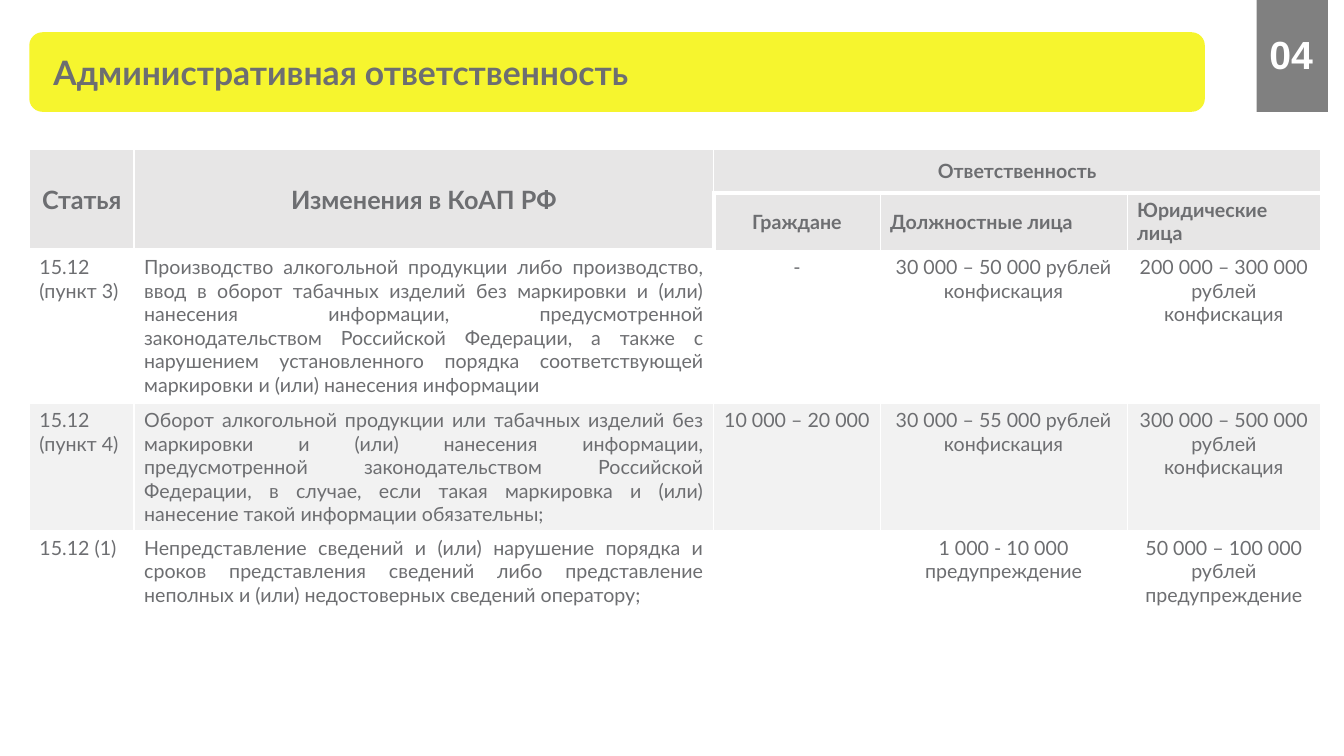
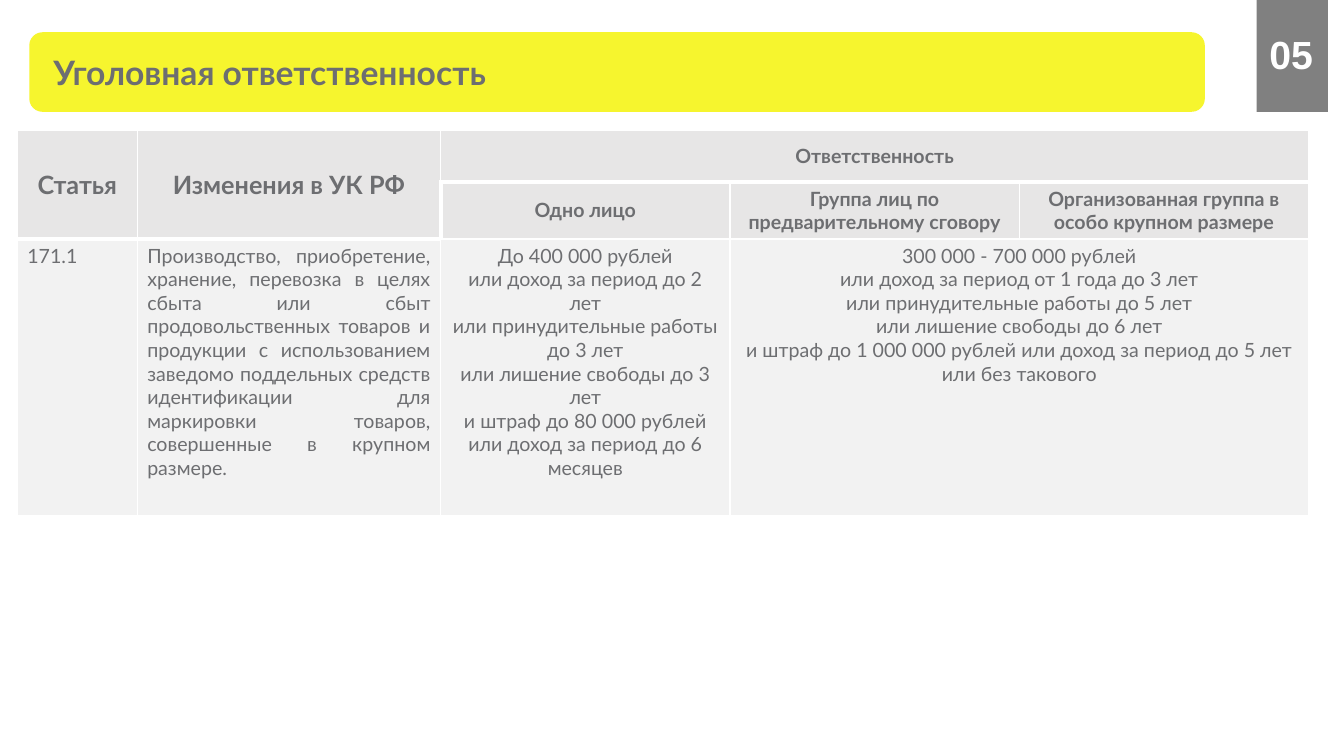
"""Builds two slides on administrative and criminal liability."""
from lxml import etree
from pptx import Presentation
from pptx import util as u
from pptx.dml.color import RGBColor
from pptx.enum import shapes, text
from pptx.oxml import ns

YELLOW = RGBColor(0xF6, 0xF5, 0x2E)
GREY = RGBColor(0x80, 0x80, 0x80)
INK = RGBColor(0x6D, 0x6E, 0x71)
HEAD = RGBColor(0xE7, 0xE6, 0xE6)
BAND = RGBColor(0xF2, 0xF2, 0xF2)
WHITE = RGBColor(0xFF, 0xFF, 0xFF)
LEFT, CENTER, JUSTIFY = (
    text.PP_ALIGN.LEFT, text.PP_ALIGN.CENTER, text.PP_ALIGN.JUSTIFY)
MIDDLE = text.MSO_ANCHOR.MIDDLE


def write(tf, content, size=14, font="Lato", color=INK, bold=False, align=LEFT):
    for i, line in enumerate(content.split("\n")):
        p = tf.paragraphs[0] if i == 0 else tf.add_paragraph()
        p.alignment = align
        r = p.add_run()
        r.text = line
        r.font.size = u.Pt(size)
        r.font.name = font
        r.font.bold = bold
        r.font.color.rgb = color


def edge_cell(cell, thick):
    tcPr = cell._tc.get_or_add_tcPr()
    for side in "LRTB":
        ln = etree.SubElement(tcPr, ns.qn("a:ln" + side))
        ln.set("w", str(u.Pt(3 if side in thick else 1)))
        fill = etree.SubElement(ln, ns.qn("a:solidFill"))
        etree.SubElement(fill, ns.qn("a:srgbClr")).set("val", str(WHITE))


def thick_sides(row, col):
    if row == 0:
        return "B"
    if row == 1:
        return "B" if col < 2 else "LT" if col == 2 else "T"
    return "T" if row == 2 and col < 2 else ""


class Deck:
    """Holds the presentation, its style and the current slide."""

    def __init__(self):
        self.prs = Presentation()
        self.prs.slide_width = u.Inches(13.33)
        self.prs.slide_height = u.Inches(7.5)
        self.s = None

    def x(self, share):
        return round(self.prs.slide_width * share / 100)

    def y(self, share):
        return round(self.prs.slide_height * share / 100)

    def box(self, left, top, width, height):
        return self.x(left), self.y(top), self.x(width), self.y(height)

    def slide(self, title, number):
        self.s = self.prs.slides.add_slide(self.prs.slide_layouts[6])
        banner = self.shape(shapes.MSO_SHAPE.ROUNDED_RECTANGLE, YELLOW,
                            2.18, 4.27, 87.47, 10.53)
        self.label(banner, title, 0.2, size=24, bold=True)
        self.shape(shapes.MSO_SHAPE.RECTANGLE, GREY, 93.5, 0, 5.3, 14.8)
        sp = self.s.shapes.add_textbox(*self.box(94.45, 4, 3.6, 6.27))
        self.label(sp, number, 0, size=28, font="Arial", color=WHITE, bold=True)

    def shape(self, kind, color, *place):
        sp = self.s.shapes.add_shape(kind, *self.box(*place))
        sp.shadow.inherit = False
        sp.fill.solid()
        sp.fill.fore_color.rgb = color
        sp.line.fill.background()
        return sp

    def label(self, sp, content, inset, **style):
        tf = sp.text_frame
        tf.word_wrap = True
        tf.vertical_anchor = MIDDLE
        tf.margin_left = tf.margin_right = u.Inches(inset)
        tf.margin_top = tf.margin_bottom = u.Inches(inset)
        write(tf, content, **style)

    def table(self, left, top, cols, rows, cells, merges, banded, head_aligns):
        frame = self.s.shapes.add_table(
            len(rows), len(cols), *self.box(left, top, sum(cols), sum(rows)))
        tbl = frame.table
        tbl.first_row = tbl.horz_banding = False
        for col, width in zip(tbl.columns, cols):
            col.width = self.x(width)
        for row, height in zip(tbl.rows, rows):
            row.height = self.y(height)
        for first, last in merges:
            tbl.cell(*first).merge(tbl.cell(*last))
        for i, line in enumerate(cells):
            for j, content in enumerate(line):
                self.cell(tbl.cell(i, j), i, j, content, banded, head_aligns)

    def cell(self, cell, i, j, content, banded, head_aligns):
        edge_cell(cell, thick_sides(i, j))
        if i < 2 or i in banded:
            cell.fill.solid()
            cell.fill.fore_color.rgb = HEAD if i < 2 else BAND
        else:
            cell.fill.background()
        if i < 2:
            cell.vertical_anchor = MIDDLE
        if content and i < 2:
            align = head_aligns[j] if i == 1 else CENTER
            write(cell.text_frame, content, size=18 if j < 2 else 14,
                  bold=True, align=align)
        elif content:
            write(cell.text_frame, content, align=JUSTIFY if j < 2 else CENTER)


HEAD_MERGES = [((0, 0), (1, 0)), ((0, 1), (1, 1)), ((0, 2), (0, 4))]

ADMINISTRATIVE = [
    ["Статья", "Изменения в КоАП РФ", "Ответственность", "", ""],
    ["", "", "Граждане", "Должностные лица", "Юридические лица"],
    ["15.12 (пункт 3)",
     "Производство алкогольной продукции либо производство, ввод в оборот "
     "табачных изделий без маркировки и (или) нанесения информации, "
     "предусмотренной законодательством Российской Федерации, а также с "
     "нарушением установленного порядка соответствующей маркировки и (или) "
     "нанесения информации",
     "-", "30 000 – 50 000 рублей\nконфискация",
     "200 000 – 300 000 рублей\nконфискация"],
    ["15.12 (пункт 4)",
     "Оборот алкогольной продукции или табачных изделий без маркировки и "
     "(или) нанесения информации, предусмотренной законодательством "
     "Российской Федерации, в случае, если такая маркировка и (или) "
     "нанесение такой информации обязательны;",
     "10 000 – 20 000", "30 000 – 55 000 рублей\nконфискация",
     "300 000 – 500 000 рублей\nконфискация"],
    ["15.12 (1)",
     "Непредставление сведений и (или) нарушение порядка и сроков "
     "представления сведений либо представление неполных и (или) "
     "недостоверных сведений оператору;",
     "", "1 000 - 10 000\nпредупреждение",
     "50 000 – 100 000 рублей\nпредупреждение"],
]

CRIMINAL = [
    ["Статья", "Изменения в УК РФ", "Ответственность", "", ""],
    ["", "", "Одно лицо", "Группа лиц по предварительному сговору",
     "Организованная группа в особо крупном размере"],
    ["171.1",
     "Производство, приобретение, хранение, перевозка в целях сбыта или сбыт "
     "продовольственных товаров и продукции с использованием заведомо "
     "поддельных средств идентификации для маркировки товаров, совершенные "
     "в крупном размере.",
     "До 400 000 рублей\nили доход за период до 2 лет\n"
     "или принудительные работы до 3 лет\nили лишение свободы до 3 лет\n"
     "и штраф до 80 000 рублей или доход за период до 6 месяцев",
     "300 000 - 700 000 рублей\nили доход за период от 1 года до 3 лет\n"
     "или принудительные работы до 5 лет\nили лишение свободы до 6 лет\n"
     "и штраф до 1 000 000 рублей или доход за период до 5 лет "
     "или без такового", ""],
]


def main():
    deck = Deck()
    deck.slide("Административная ответственность", "04")
    deck.table(2.18, 19.73, [7.8, 43.13, 12.38, 18.38, 14.4],
               [5.8, 7.45, 20.25, 16.67, 12.53], ADMINISTRATIVE, HEAD_MERGES,
               banded={3}, head_aligns=[CENTER] * 3 + [LEFT] * 2)
    deck.slide("Уголовная ответственность", "05")
    deck.table(1.28, 17.3, [8.93, 22.58] + [21.53] * 3, [6.75, 7.5, 36.6],
               CRIMINAL, HEAD_MERGES + [((2, 3), (2, 4))],
               banded={2}, head_aligns=[CENTER] * 5)
    deck.prs.save("out.pptx")


if __name__ == "__main__":
    main()
